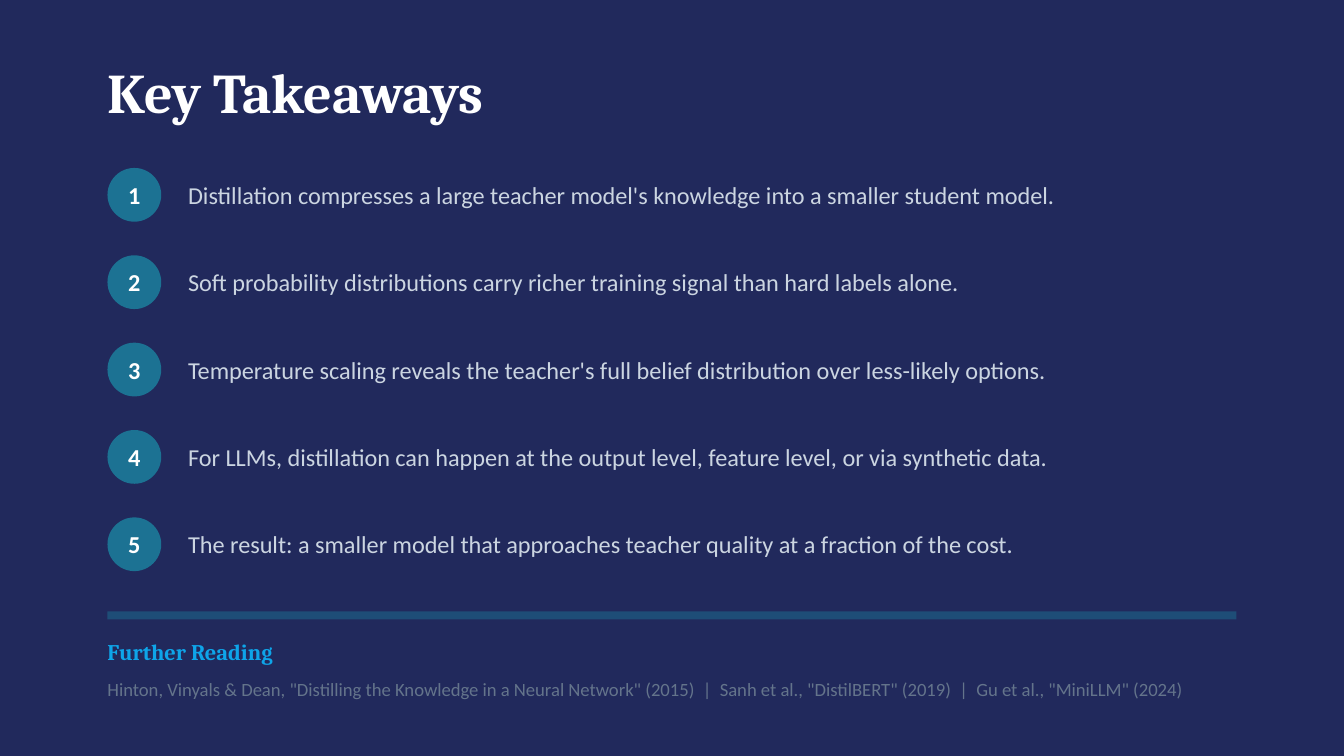
from dataclasses import dataclass

from lxml.etree import SubElement
from pptx import Presentation
from pptx.dml.color import RGBColor
from pptx.enum.shapes import MSO_SHAPE as Shape
from pptx.enum.text import MSO_ANCHOR as Anchor, MSO_AUTO_SIZE as AutoSize, PP_ALIGN as Align
from pptx.oxml.ns import qn
from pptx.util import Inches, Pt


@dataclass(frozen=True)
class Theme:
    navy: str = "21295C"
    teal: str = "1C7293"
    sky: str = "0EA5E9"
    white: str = "FFFFFF"
    pale: str = "CBD5E1"
    slate: str = "64748B"
    heading_font: str = "Cambria"
    body_font: str = "Calibri"
    title_size: int = 30
    body_size: int = 13
    subhead_size: int = 12
    citation_size: int = 10


THEME = Theme()
COLUMN, ROW = Inches(0.2), Inches(0.05)  # grid cell

TAKEAWAYS = [
    "Distillation compresses a large teacher model's knowledge into a smaller student model.",
    "Soft probability distributions carry richer training signal than hard labels alone.",
    "Temperature scaling reveals the teacher's full belief distribution over less-likely options.",
    "For LLMs, distillation can happen at the output level, feature level, or via synthetic data.",
    "The result: a smaller model that approaches teacher quality at a fraction of the cost.",
]
CITATIONS = [
    'Hinton, Vinyals & Dean, "Distilling the Knowledge in a Neural Network" (2015)',
    'Sanh et al., "DistilBERT" (2019)',
    'Gu et al., "MiniLLM" (2024)',
]


def write(frame, text, *, size, color, font=THEME.body_font, bold=False, align=Align.LEFT):
    frame.auto_size = AutoSize.NONE
    frame.word_wrap = True
    frame.vertical_anchor = Anchor.MIDDLE
    frame.margin_left = frame.margin_right = frame.margin_top = frame.margin_bottom = 0
    paragraph = frame.paragraphs[0]
    paragraph.alignment = align
    run = paragraph.add_run()
    run.text = text
    run.font.name, run.font.size, run.font.bold = font, Pt(size), bold
    run.font.color.rgb = RGBColor.from_string(color)


def cells(column, row, columns, rows):
    return (round(column * COLUMN), round(row * ROW),
            round(columns * COLUMN), round(rows * ROW))


class SlideBuilder:
    def __init__(self, presentation, theme):
        self.theme = theme
        self.slide = presentation.slides.add_slide(presentation.slide_layouts[5])
        background = self.slide.background.fill
        background.solid()
        background.fore_color.rgb = RGBColor.from_string(theme.navy)

    def title(self, text, *place):
        title = self.slide.shapes.title
        title.left, title.top, title.width, title.height = cells(*place)
        write(title.text_frame, text, size=self.theme.title_size,
              color=self.theme.white, font=self.theme.heading_font, bold=True)

    def text(self, text, *place, **style):
        box = self.slide.shapes.add_textbox(*cells(*place))
        write(box.text_frame, text, **style)

    def shape(self, kind, *place, opacity=None):
        shape = self.slide.shapes.add_shape(kind, *cells(*place))
        shape.shadow.inherit = False
        shape.line.fill.background()
        shape.fill.solid()
        shape.fill.fore_color.rgb = RGBColor.from_string(self.theme.teal)
        if opacity is not None:
            color = shape.fill._xPr.find(".//" + qn("a:srgbClr"))
            SubElement(color, qn("a:alpha"), val=str(opacity * 1000))
        return shape

    def takeaway(self, number, text, row):
        badge = self.shape(Shape.OVAL, 4, row, 2, 8)
        write(badge.text_frame, str(number), size=self.theme.body_size,
              color=self.theme.white, bold=True, align=Align.CENTER)
        self.text(text, 7, row - 1, 40, 10,
                  size=self.theme.body_size, color=self.theme.pale)


def main():
    presentation = Presentation()
    presentation.slide_width = Inches(10)
    presentation.slide_height = Inches(10) * 9 // 16
    builder = SlideBuilder(presentation, THEME)

    # Title and numbered takeaways
    builder.title("Key Takeaways", 4, 8, 30, 11)
    for index, takeaway in enumerate(TAKEAWAYS):
        builder.takeaway(index + 1, takeaway, 25 + 13 * index)

    # Divider and further reading
    builder.shape(Shape.RECTANGLE, 4, 91, 42, 1.2, opacity=50)
    builder.text("Further Reading", 4, 94, 15, 6, size=THEME.subhead_size,
                 color=THEME.sky, font=THEME.heading_font, bold=True)
    builder.text("  |  ".join(CITATIONS), 4, 99, 42, 7,
                 size=THEME.citation_size, color=THEME.slate)

    presentation.save("out.pptx")


if __name__ == "__main__":
    main()
